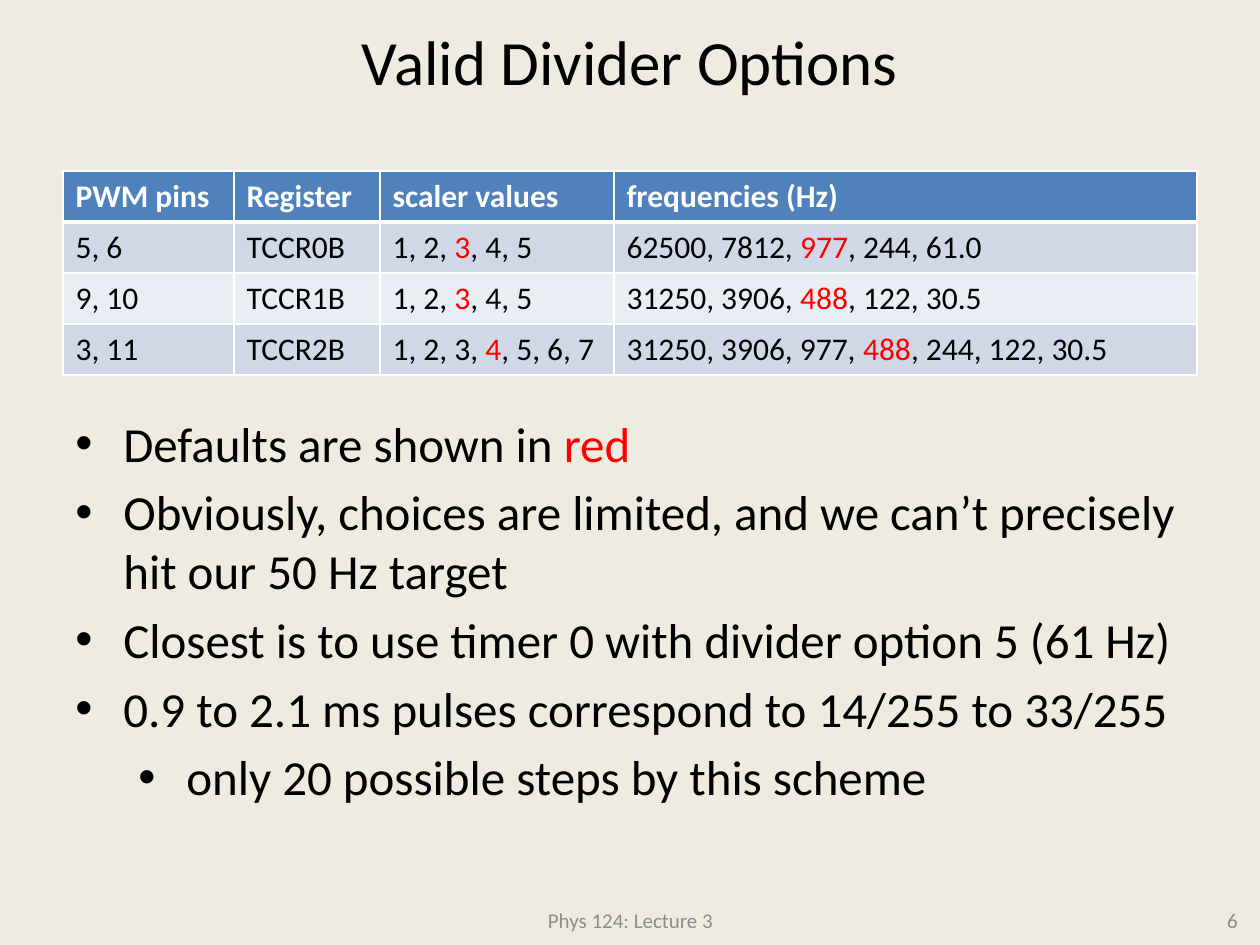
from pptx import Presentation
from pptx.dml.color import RGBColor as RGB
from pptx.enum.text import MSO_ANCHOR as Anchor, PP_ALIGN as Align
from pptx.oxml import parse_xml
from pptx.oxml.ns import nsdecls
from pptx.util import Pt

SCALE = 914400 / 126
FONT = "Calibri"
BACK = RGB(0xEE, 0xEC, 0xE1)
BLACK = RGB(0, 0, 0)
WHITE = RGB(255, 255, 255)
RED = RGB(255, 0, 0)
GREY = RGB(0x8C, 0x8C, 0x8C)
HEAD = RGB(0x4F, 0x81, 0xBD)
BANDS = (RGB(0xE9, 0xED, 0xF4), RGB(0xD0, 0xD8, 0xE8))

ROWS = [
    ("PWM pins", "Register", "scaler values", "frequencies (Hz)"),
    ("5, 6", "TCCR0B", "1, 2, *3*, 4, 5", "62500, 7812, *977*, 244, 61.0"),
    ("9, 10", "TCCR1B", "1, 2, *3*, 4, 5", "31250, 3906, *488*, 122, 30.5"),
    ("3, 11", "TCCR2B", "1, 2, 3, *4*, 5, 6, 7", "31250, 3906, 977, *488*, 244, 122, 30.5"),
]
POINTS = [
    (0, "Defaults are shown in *red*"),
    (0, "Obviously, choices are limited, and we can’t precisely hit our 50 Hz target"),
    (0, "Closest is to use timer 0 with divider option 5 (61 Hz)"),
    (0, "0.9 to 2.1 ms pulses correspond to 14/255 to 33/255"),
    (1, "only 20 possible steps by this scheme"),
]


def emu(px):
    return round(px * SCALE)


class Deck:
    """Holds the style and the current slide; asterisks in text mark red words."""

    def __init__(self, wide, high):
        self.prs = Presentation()
        self.prs.slide_width, self.prs.slide_height = emu(wide), emu(high)
        self.slide = self.prs.slides.add_slide(self.prs.slide_layouts[6])
        fill = self.slide.background.fill
        fill.solid()
        fill.fore_color.rgb = BACK

    def ink(self, para, text, size, color=BLACK, bold=False):
        for i, part in enumerate(text.split("*")):
            if not part:
                continue
            run = para.add_run()
            run.text = part
            font = run.font
            font.name, font.size, font.bold = FONT, Pt(size), bold
            font.color.rgb = RED if i % 2 else color

    def frame(self, box, anchor):
        frame = self.slide.shapes.add_textbox(*map(emu, box)).text_frame
        frame.word_wrap = True
        frame.vertical_anchor = anchor
        return frame

    def label(self, box, text, size, color, align):
        para = self.frame(box, Anchor.MIDDLE).paragraphs[0]
        para.alignment = align
        self.ink(para, text, size, color)

    def points(self, box, items, size):
        frame = self.frame(box, Anchor.TOP)
        for i, (level, text) in enumerate(items):
            para = frame.add_paragraph() if i else frame.paragraphs[0]
            para.level = level
            para.space_before = Pt(size / 5)
            props = para._p.get_or_add_pPr()
            props.set("marL", str(emu(48 + 63 * level)))
            props.set("indent", str(-emu(48)))
            props.append(parse_xml(f'<a:buFont {nsdecls("a")} typeface="Arial"/>'))
            props.append(parse_xml(f'<a:buChar {nsdecls("a")} char="•"/>'))
            self.ink(para, text, size)

    def edge(self, cell, sides):
        props = cell._tc.get_or_add_tcPr()
        for i, (side, width) in enumerate(sides.items()):
            props.insert(i, parse_xml(
                f'<a:ln{side} {nsdecls("a")} w="{Pt(width)}"><a:solidFill>'
                f'<a:srgbClr val="{WHITE}"/></a:solidFill></a:ln{side}>'))

    def table(self, left, top, cols, high, rows, size):
        table = self.slide.shapes.add_table(
            len(rows), len(cols), emu(left), emu(top),
            emu(sum(cols)), emu(high * len(rows))).table
        for col, width in zip(table.columns, cols):
            col.width = emu(width)
        for r, row in enumerate(rows):
            table.rows[r].height = emu(high)
            for c, text in enumerate(row):
                cell = table.cell(r, c)
                cell.fill.solid()
                cell.fill.fore_color.rgb = BANDS[r % 2] if r else HEAD
                self.edge(cell, {"L": 1, "R": 1, "T": 3 if r == 1 else 1, "B": 1 if r else 3})
                self.ink(cell.text_frame.paragraphs[0], text, size,
                         BLACK if r else WHITE, r == 0)


def main():
    deck = Deck(1260, 945)
    deck.label((63, 10, 1134, 101), "Valid Divider Options", 36, BLACK, Align.CENTER)
    deck.table(63, 171, (171, 146, 234, 583), 51, ROWS, 18)
    deck.label((431, 895, 399, 50), "Phys 124: Lecture 3", 12, GREY, Align.CENTER)
    deck.label((956, 895, 294, 50), "6", 12, GREY, Align.RIGHT)
    deck.points((63, 407, 1134, 488), POINTS, 28)
    deck.prs.save("out.pptx")


if __name__ == "__main__":
    main()
